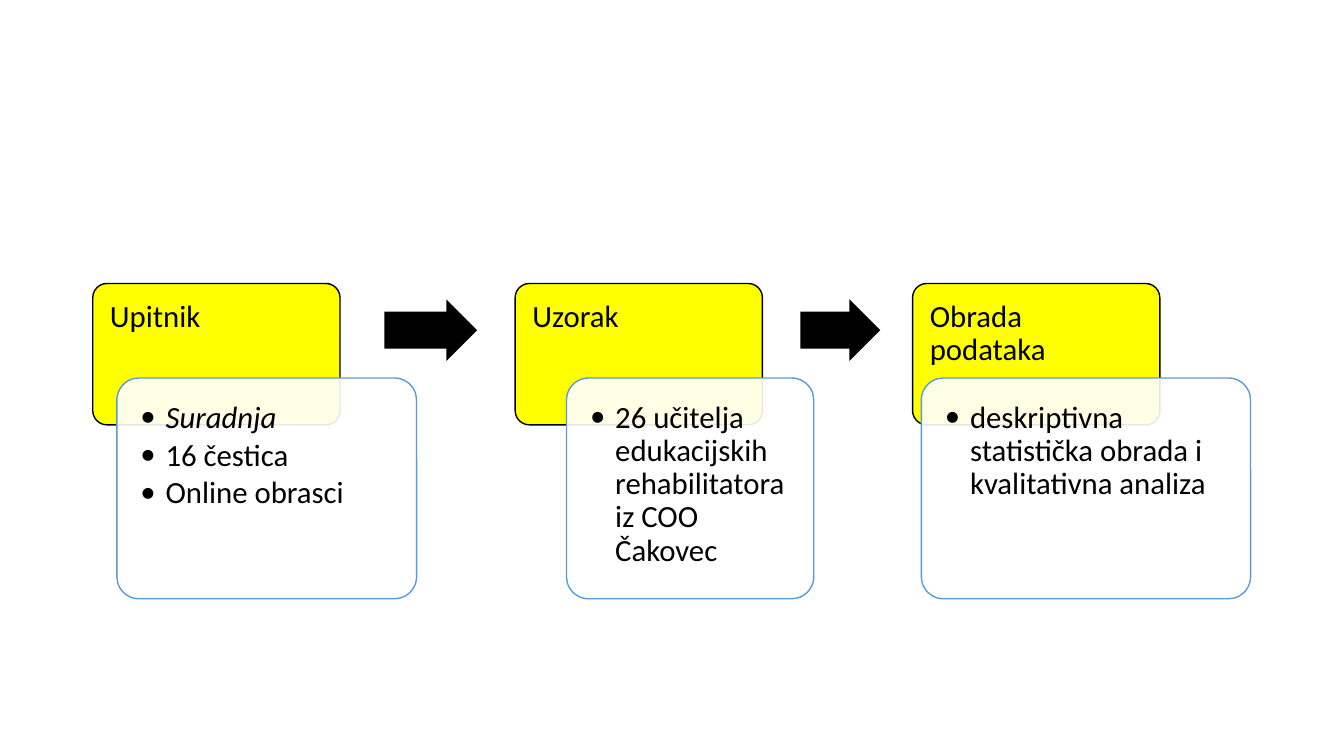
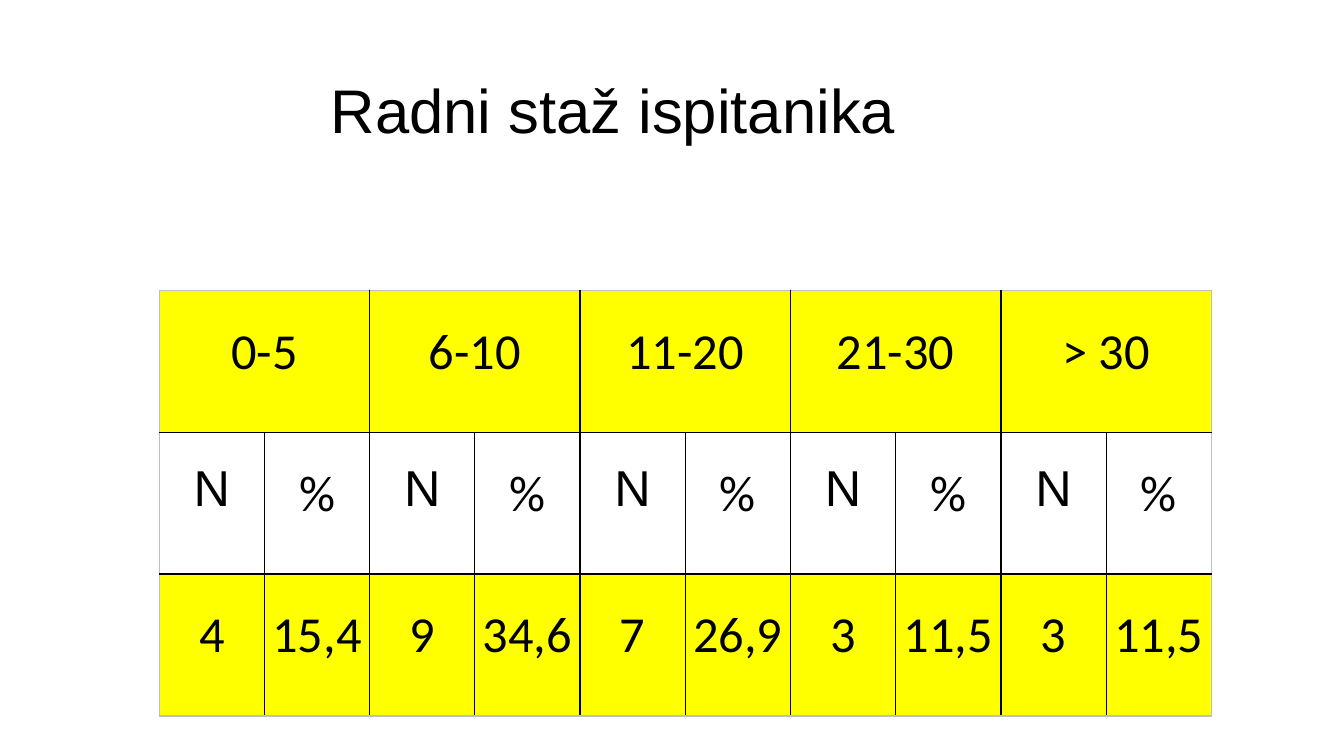
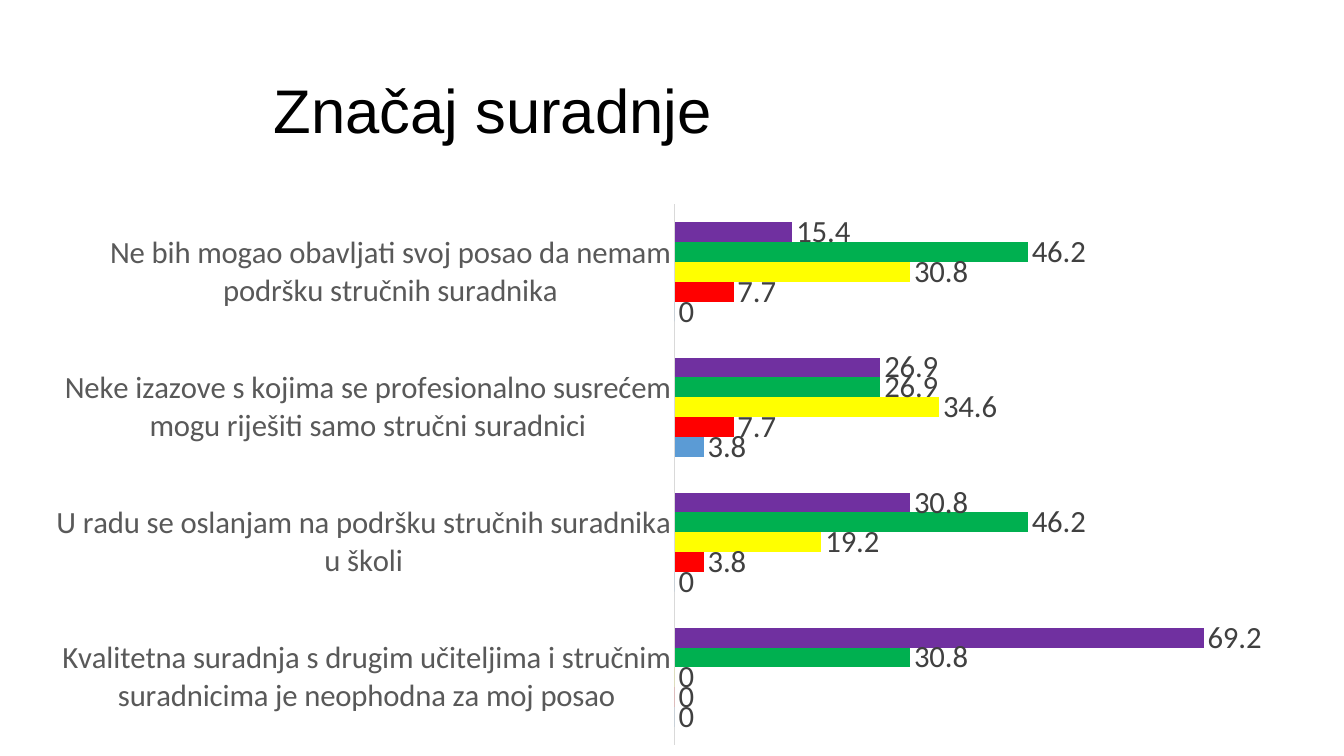
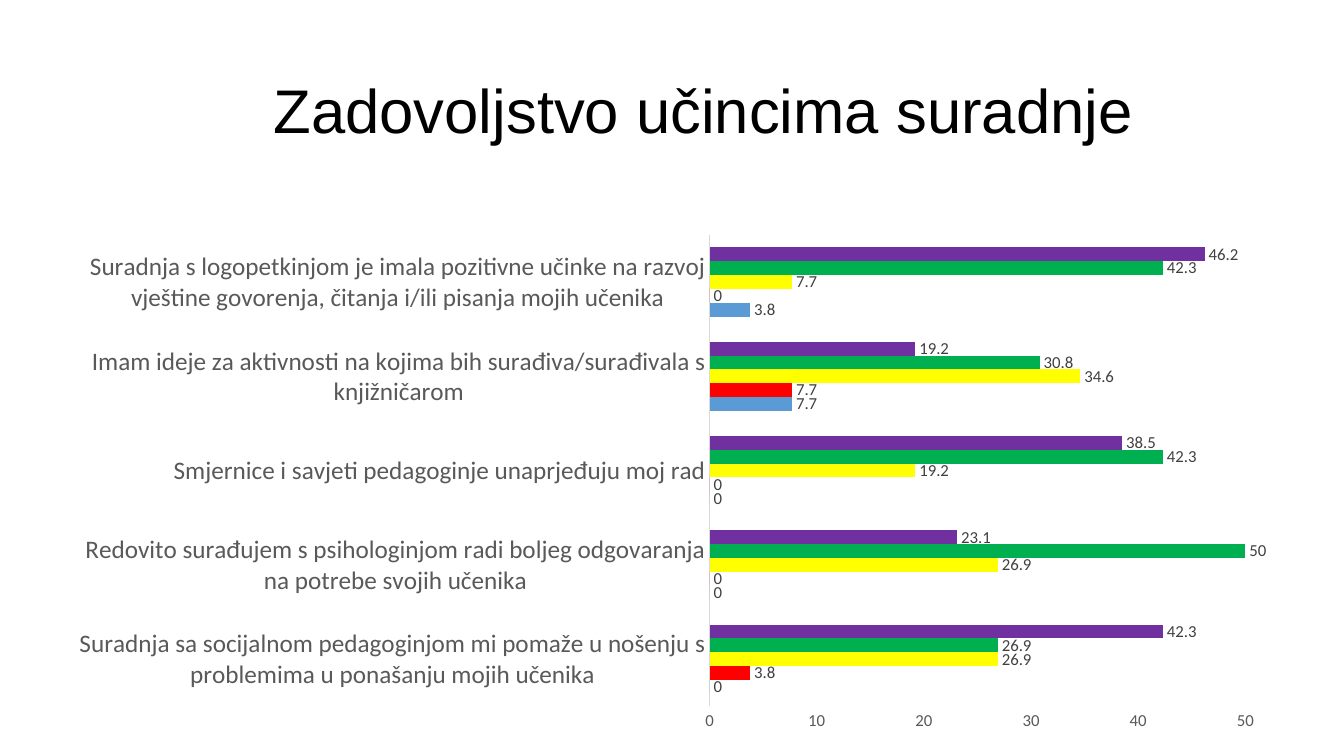
from lxml.etree import SubElement
from pptx import Presentation
from pptx.chart.data import CategoryChartData
from pptx.dml.color import RGBColor
from pptx.enum.chart import XL_CHART_TYPE, XL_LABEL_POSITION, XL_TICK_LABEL_POSITION, XL_TICK_MARK
from pptx.enum.shapes import MSO_SHAPE
from pptx.enum.text import MSO_ANCHOR, MSO_AUTO_SIZE, PP_ALIGN
from pptx.oxml import parse_xml
from pptx.oxml.ns import nsdecls, qn
from pptx.util import Inches, Pt

BLACK = RGBColor(0x00, 0x00, 0x00)
WHITE = RGBColor(0xFF, 0xFF, 0xFF)
YELLOW = RGBColor(0xFF, 0xFF, 0x00)
BLUE = RGBColor(0x5B, 0x9B, 0xD5)
RED = RGBColor(0xFF, 0x00, 0x00)
GREEN = RGBColor(0x00, 0xB0, 0x50)
PURPLE = RGBColor(0x70, 0x30, 0xA0)
AXIS_TEXT = RGBColor(0x59, 0x59, 0x59)
LABEL_TEXT = RGBColor(0x40, 0x40, 0x40)
AXIS_LINE = RGBColor(0xD9, 0xD9, 0xD9)
TABLE_EDGE = RGBColor(0xBF, 0xBF, 0xBF)

BODY_FONT, TITLE_FONT = "Calibri", "Arial"
BAR_COLORS = [BLUE, RED, YELLOW, GREEN, PURPLE]


def set_all(target, **values):
    for name, value in values.items():
        setattr(target, name, value)


def set_font(font, size, color=BLACK, name=BODY_FONT, **extra):
    set_all(font, size=Pt(size), name=name, **extra)
    font.color.rgb = color


class Deck:
    """Style and current slide; places and sizes are percentages of the slide."""

    TITLE_RIGHT = 93.1

    def __init__(self):
        self.prs = Presentation()
        set_all(self.prs, slide_width=Inches(13.333), slide_height=Inches(7.5))

    def box(self, left, top, width, height):
        w, h = self.prs.slide_width, self.prs.slide_height
        return [int(share * side / 100) for share, side in zip((left, top, width, height), (w, h, w, h))]

    def blank_slide(self):
        self.s = self.prs.slides.add_slide(self.prs.slide_layouts[6])

    def title_slide(self, text, left):
        self.s = self.prs.slides.add_slide(self.prs.slide_layouts[5])
        sp = self.s.shapes.title
        place = self.box(left, 5.33, self.TITLE_RIGHT - left, 19.33)
        set_all(sp, **dict(zip(("left", "top", "width", "height"), place)))
        tf = sp.text_frame
        set_all(tf, word_wrap=True, auto_size=MSO_AUTO_SIZE.NONE, vertical_anchor=MSO_ANCHOR.MIDDLE)
        p = tf.paragraphs[0]
        set_all(p, text=text, alignment=PP_ALIGN.LEFT, line_spacing=0.9)
        set_font(p.runs[0].font, 44, name=TITLE_FONT)

    def shape(self, kind, place, fill, line=None, adjust=(0.1,)):
        sp = self.s.shapes.add_shape(kind, *self.box(*place))
        sp.shadow.inherit = False
        for i, value in enumerate(adjust):
            sp.adjustments[i] = value
        sp.fill.solid()
        sp.fill.fore_color.rgb = fill
        if line is None:
            sp.line.fill.background()
        else:
            sp.line.color.rgb = line
            sp.line.width = Pt(1)
        return sp

    def text(self, sp, lines, inset, bullets=False, italic_first=False):
        tf = sp.text_frame
        margins = dict.fromkeys(("margin_left", "margin_top", "margin_right", "margin_bottom"), Inches(inset))
        set_all(tf, word_wrap=True, vertical_anchor=MSO_ANCHOR.TOP, **margins)
        for i, line in enumerate(lines):
            p = tf.add_paragraph() if i else tf.paragraphs[0]
            set_all(p, alignment=PP_ALIGN.LEFT, line_spacing=0.9, space_after=Pt(3.3))
            if bullets:
                pPr = p._p.get_or_add_pPr()
                pPr.set("marL", str(Inches(0.25)))
                pPr.set("indent", str(-Inches(0.25)))
                SubElement(pPr, qn("a:buFont"), typeface=BODY_FONT)
                SubElement(pPr, qn("a:buChar"), char="•")
            r = p.add_run()
            r.text = line
            set_font(r.font, 22, italic=italic_first and i == 0)

    def header_card(self, left, text):
        sp = self.shape(MSO_SHAPE.ROUNDED_RECTANGLE, (left, 37.5, 18.4, 18.7), YELLOW, BLACK)
        self.text(sp, [text], 0.13)

    def detail_card(self, left, width, lines, italic_first):
        sp = self.shape(MSO_SHAPE.ROUNDED_RECTANGLE, (left, 50, width, 29.2), WHITE, BLUE)
        color = sp.element.spPr.find(qn("a:solidFill")).find(qn("a:srgbClr"))
        SubElement(color, qn("a:alpha"), val="90000")
        self.text(sp, lines, 0.17, bullets=True, italic_first=italic_first)

    def arrow(self, left, width):
        self.shape(MSO_SHAPE.RIGHT_ARROW, (left, 39.6, width, 8.15), BLACK, adjust=(0.6, 0.5))

    def borders(self, cell, edges):
        """Draw left, right, top and bottom; True marks the table's outer edge."""
        tcPr = cell._tc.get_or_add_tcPr()
        for tag, outer in zip(("lnL", "lnR", "lnT", "lnB"), edges):
            ln = SubElement(tcPr, qn("a:" + tag), w=str(Pt(1)))
            fill = SubElement(ln, qn("a:solidFill"))
            SubElement(fill, qn("a:srgbClr"), val=str(TABLE_EDGE if outer else BLACK))

    def table(self, place, groups, heads, values):
        grid = [[t for g in groups for t in (g, "")], heads * len(groups), values]
        n_rows, n_cols = len(grid), len(values)
        table = self.s.shapes.add_table(n_rows, n_cols, *self.box(*place)).table
        set_all(table, first_row=False, horz_banding=False)
        for c in range(0, n_cols, 2):
            table.cell(0, c).merge(table.cell(0, c + 1))
        for r, row in enumerate(grid):
            for c, text in enumerate(row):
                cell = table.cell(r, c)
                set_all(cell, margin_left=Inches(0.07), margin_right=Inches(0.07), margin_top=0, margin_bottom=0)
                at_right = c + cell.span_width >= n_cols
                self.borders(cell, (c == 0, at_right, r == 0, r == n_rows - 1))
                if r == 1:
                    cell.fill.background()
                else:
                    cell.fill.solid()
                    cell.fill.fore_color.rgb = YELLOW
                if text:
                    p = cell.text_frame.paragraphs[0]
                    set_all(p, text=text, alignment=PP_ALIGN.CENTER, line_spacing=1.5)
                    set_font(p.runs[0].font, 36, name=TITLE_FONT if text == "N" else BODY_FONT)

    def bar_chart(self, place, plot_area, rows, cat_size, value_size, maximum, show_scale):
        """Rows are (category, one value per bar colour), from the bottom up."""
        data = CategoryChartData()
        data.categories = [category for category, _ in rows]
        for values in zip(*(values for _, values in rows)):
            data.add_series("", values)
        chart = self.s.shapes.add_chart(XL_CHART_TYPE.BAR_CLUSTERED, *self.box(*place), data).chart
        set_all(chart, has_legend=False, has_title=False)
        set_font(chart.font, value_size)
        for axis, size in ((chart.category_axis, cat_size), (chart.value_axis, value_size)):
            set_all(axis, major_tick_mark=XL_TICK_MARK.NONE, minor_tick_mark=XL_TICK_MARK.NONE,
                    has_major_gridlines=False)
            set_font(axis.tick_labels.font, size, AXIS_TEXT)
        line = chart.category_axis.format.line
        line.color.rgb = AXIS_LINE
        line.width = Pt(0.75)
        scale = chart.value_axis
        set_all(scale, minimum_scale=0, maximum_scale=maximum, major_unit=10)
        scale.format.line.fill.background()
        if not show_scale:
            scale.tick_label_position = XL_TICK_LABEL_POSITION.NONE
        plot = chart.plots[0]
        set_all(plot, gap_width=182, overlap=0, vary_by_categories=False)
        for series, color in zip(plot.series, BAR_COLORS):
            series.format.fill.solid()
            series.format.fill.fore_color.rgb = color
            labels = series.data_labels
            set_all(labels, show_value=True, position=XL_LABEL_POSITION.OUTSIDE_END)
            set_font(labels.font, value_size, LABEL_TEXT)
        self.place_plot(chart, plot_area)

    def place_plot(self, chart, plot_area):
        area = chart._chartSpace.find(".//" + qn("c:plotArea"))
        for old in area.findall(qn("c:layout")):
            area.remove(old)
        settings = [("layoutTarget", "inner"), ("xMode", "edge"), ("yMode", "edge"), *zip("xywh", plot_area)]
        items = "".join(f'<c:{tag} val="{value}"/>' for tag, value in settings)
        area.insert(0, parse_xml(f'<c:layout {nsdecls("c")}><c:manualLayout>{items}</c:manualLayout></c:layout>'))


def method_slide(deck):
    deck.blank_slide()
    steps = [
        (6.9, "Upitnik", 8.7, 22.3, ["Suradnja", "16 čestica", "Online obrasci"], True),
        (38.33, "Uzorak", 42.15, 18.4, ["26 učitelja edukacijskih rehabilitatora iz COO Čakovec"], False),
        (67.9, "Obrada podataka", 68.55, 24.5, ["deskriptivna statistička obrada i kvalitativna analiza"], False),
    ]
    for left, head, detail_left, width, lines, italic_first in steps:
        deck.header_card(left, head)
        deck.detail_card(detail_left, width, lines, italic_first)
    for left, width in ((28.6, 6.9), (59.55, 5.95)):
        deck.arrow(left, width)


def experience_slide(deck):
    deck.title_slide("Radni staž ispitanika", 23.85)
    deck.table((11.85, 38.4, 78.3, 56.3), ["0-5", "6-10", "11-20", "21-30", "> 30"], ["N", "%"],
               ["4", "15,4", "9", "34,6", "7", "26,9", "3", "11,5", "3", "11,5"])


def importance_slide(deck):
    deck.title_slide("Značaj suradnje", 19.6)
    rows = [
        ("Kvalitetna suradnja s drugim učiteljima i stručnim suradnicima je neophodna za moj posao",
         (0, 0, 0, 30.8, 69.2)),
        ("U radu se oslanjam na podršku stručnih suradnika u školi", (0, 3.8, 19.2, 46.2, 30.8)),
        ("Neke izazove s kojima se profesionalno susrećem mogu riješiti samo stručni suradnici",
         (3.8, 7.7, 34.6, 26.9, 26.9)),
        ("Ne bih mogao obavljati svoj posao da nemam podršku stručnih suradnika", (0, 7.7, 30.8, 46.2, 15.4)),
    ]
    deck.bar_chart((4.2, 26.67, 92.9, 73.33), (0.494, 0.005, 0.491, 0.975), rows,
                   cat_size=22, value_size=22, maximum=80, show_scale=False)


def satisfaction_slide(deck):
    deck.title_slide("Zadovoljstvo učincima suradnje", 19.6)
    rows = [
        ("Suradnja sa socijalnom pedagoginjom mi pomaže u nošenju s problemima u ponašanju mojih učenika",
         (0, 3.8, 26.9, 26.9, 42.3)),
        ("Redovito surađujem s psihologinjom radi boljeg odgovaranja na potrebe svojih učenika",
         (0, 0, 26.9, 50, 23.1)),
        ("Smjernice i savjeti pedagoginje unaprjeđuju moj rad", (0, 0, 19.2, 42.3, 38.5)),
        ("Imam ideje za aktivnosti na kojima bih surađiva/surađivala s knjižničarom",
         (7.7, 7.7, 34.6, 30.8, 19.2)),
        ("Suradnja s logopetkinjom je imala pozitivne učinke na razvoj vještine govorenja, "
         "čitanja i/ili pisanja mojih učenika", (3.8, 0, 7.7, 42.3, 46.2)),
    ]
    deck.bar_chart((4.65, 24.67, 95.35, 75.33), (0.505, 0.085, 0.46, 0.828), rows,
                   cat_size=18, value_size=12, maximum=55, show_scale=True)


def main():
    deck = Deck()
    for build in (method_slide, experience_slide, importance_slide, satisfaction_slide):
        build(deck)
    deck.prs.save("out.pptx")


if __name__ == "__main__":
    main()
